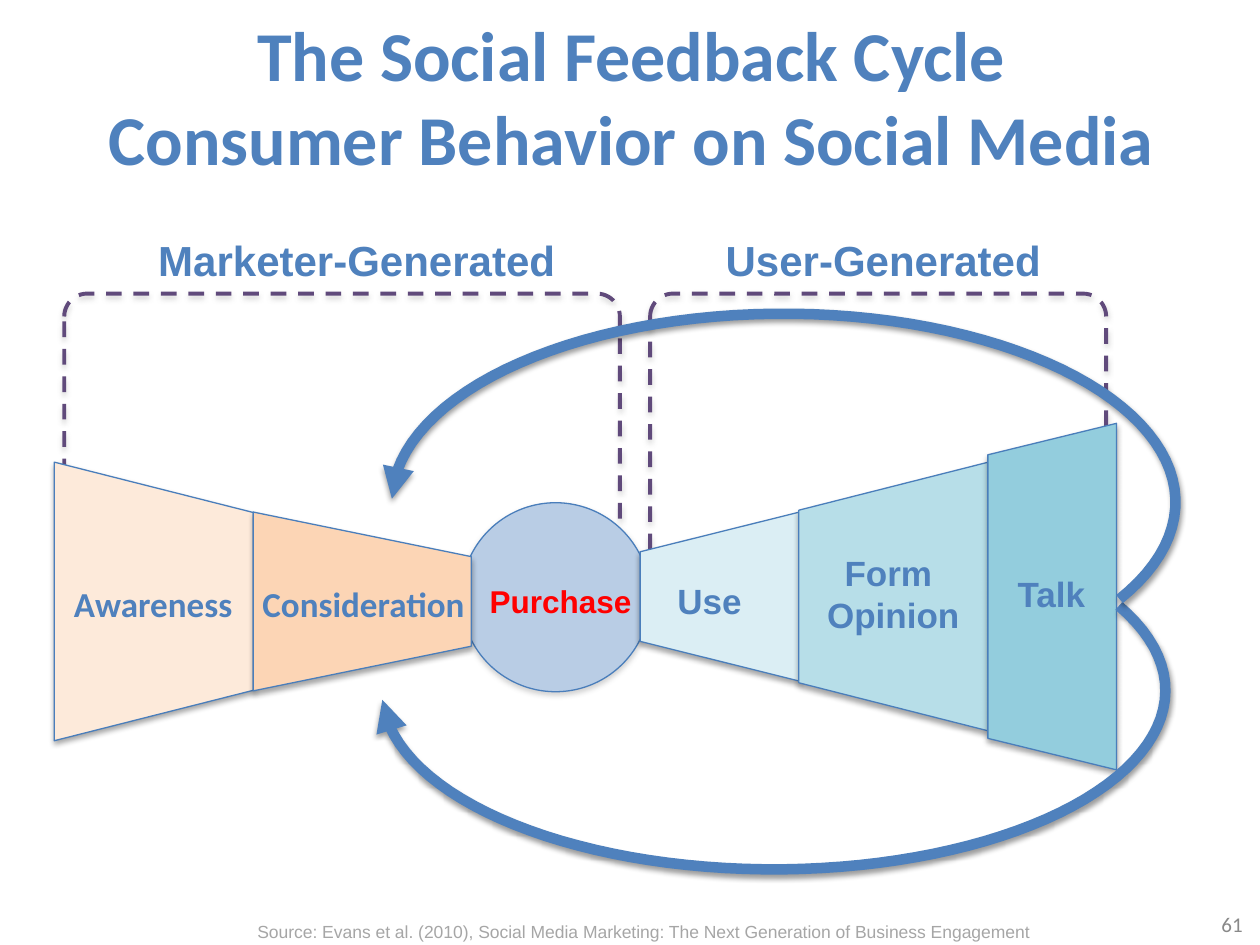
"""Build the social feedback cycle slide."""
import math

import pptx
import pptx.dml.color
import pptx.enum.dml
import pptx.enum.shapes
import pptx.enum.text
import pptx.oxml
import pptx.util

Pt = pptx.util.Pt
RGB = pptx.dml.color.RGBColor.from_string
KIND = pptx.enum.shapes.MSO_SHAPE
ALIGN = pptx.enum.text.PP_ALIGN
ANCHOR = pptx.enum.text.MSO_ANCHOR
DASH = pptx.enum.dml.MSO_LINE.DASH
NS = 'xmlns:a="http://schemas.openxmlformats.org/drawingml/2006/main"'

THEME = {
    "blue": "4F81BD", "edge": "4A7EBB", "frame": "604A7B", "ball": "B9CDE5",
    "red": "FF0000", "gray": "898989", "pale": "A6A6A6",
    "soft": "808080", "dark": "000000",
    "title": 40, "head": 24, "step": 20, "buy": 18, "page": 12, "note": 10,
}

FRAMES = [(371.5, 167.8, 260.6, 169.9), (36.7, 167.8, 317.5, 169.9)]
BALL = (263.5, 287.3, 108, 108)
STEPS = [
    (31, 144.7, 343.7, 79.6, 50.8, "FDEADA"),
    (144.7, 269.3, 343.7, 51.1, 25.6, "FCD5B5"),
    (365.8, 456.5, 340.9, 25.6, 48.2, "DBEEF4"),
    (456.5, 564.5, 340.9, 49.3, 76.7, "B7DEE8"),
    (564.5, 638, 340.9, 81, 99, "93CDDD"),
]
LOOPS = [
    (218.2, 292.3, 447.8, 204.5, -28.2, 177),
    (223.9, 179.3, 447.8, 215.3, 31, -179),
]
LABELS = [
    ("Awareness", (31, 332.6, 113, 24.5), "step", "Calibri", "blue"),
    ("Consideration", (144.7, 332.6, 126, 24.5), "step", "Calibri", "blue"),
    ("Purchase", (275, 332.6, 90.7, 22.3), "buy", "Arial", "red"),
    ("Use", (365.8, 331.2, 79.2, 24.5), "step", "Arial", "blue"),
    ("Form \vOpinion", (456.5, 315.4, 108, 48.2), "step", "Arial", "blue"),
    ("Talk", (569.5, 326.9, 62.6, 24.5), "step", "Arial", "blue"),
    ("User-Generated", (411.1, 133.9, 187.2, 28.8), "head", "Arial", "blue"),
    ("Marketer-Generated", (70.6, 133.9, 266.4, 28.8), "head", "Arial", "blue"),
]
TITLE = "The Social Feedback Cycle\vConsumer Behavior on Social Media"
SOURCE = ("Source: Evans et al. (2010), Social Media Marketing: "
          "The Next Generation of Business Engagement")


def put(obj, vals):
    """Set each named value on an object."""
    for name, val in vals.items():
        setattr(obj, name, val)


def style(shape, fill, line, width, shade, alpha=35, dash=None):
    """Apply fill, line and a soft drop shadow."""
    if fill:
        shape.fill.solid()
        shape.fill.fore_color.rgb = RGB(fill)
    else:
        shape.fill.background()
    shape.line.color.rgb = RGB(THEME[line])
    put(shape.line, {"width": Pt(width), "dash_style": dash})
    shape.shadow.inherit = False
    glow = pptx.oxml.parse_xml(
        f'<a:outerShdw {NS} blurRad="{Pt(3.15)}" dist="{Pt(1.8)}" dir="5400000" '
        f'rotWithShape="0"><a:srgbClr val="{THEME[shade]}">'
        f'<a:alpha val="{alpha * 1000}"/></a:srgbClr></a:outerShdw>')
    shape._element.spPr.find(pptx.oxml.ns.qn("a:effectLst")).append(glow)


def preset(shapes, kind, box):
    """Add a preset shape at a box in points."""
    return shapes.add_shape(kind, *map(Pt, box))


def trace(shapes, dots, close):
    """Add a freeform through points."""
    dots = [(Pt(x), Pt(y)) for x, y in dots]
    pen = shapes.build_freeform(*dots[0])
    pen.add_line_segments(dots[1:], close=close)
    return pen.convert_to_shape()


def write(shapes, text, box, size, face, color, bold=True, pad=None,
          align=ALIGN.CENTER, anchor=ANCHOR.TOP):
    """Add a one-paragraph text box."""
    frame = shapes.add_textbox(*map(Pt, box)).text_frame
    put(frame, {"word_wrap": True, "vertical_anchor": anchor})
    if pad is not None:
        put(frame, {f"margin_{side}": Pt(pad)
                    for side in ("left", "top", "right", "bottom")})
    para = frame.paragraphs[0]
    put(para, {"text": text, "alignment": align})
    for run in para.runs:
        put(run.font, {"size": Pt(THEME[size]), "name": face, "bold": bold})
        run.font.color.rgb = RGB(THEME[color])


def curve(shapes, left, top, width, height, start, end, count=72):
    """Add an elliptic arrow between two angles."""
    turns = [math.radians(start + (end - start) * i / count)
             for i in range(count + 1)]
    dots = [(left + width / 2 * (1 + math.cos(t)),
             top + height / 2 * (1 + math.sin(t))) for t in turns]
    shape = trace(shapes, dots, False)
    style(shape, None, "blue", 6, "dark", 38)
    shape.line._ln.append(pptx.oxml.parse_xml(f'<a:tailEnd {NS} type="triangle"/>'))


def main():
    """Draw the slide and save it."""
    deck = pptx.Presentation()
    put(deck, {"slide_width": Pt(720), "slide_height": Pt(540)})
    shapes = deck.slides.add_slide(deck.slide_layouts[6]).shapes

    for box in FRAMES:
        frame = preset(shapes, KIND.ROUNDED_RECTANGLE, box)
        frame.adjustments[0] = 0.077
        style(frame, None, "frame", 2.25, "soft", dash=DASH)
    style(preset(shapes, KIND.OVAL, BALL), THEME["ball"], "edge", 0.75, "soft")

    write(shapes, TITLE, (36.7, 9.4, 648, 90), "title", "Calibri", "blue",
          anchor=ANCHOR.MIDDLE)
    write(shapes, "61", (549.4, 513.4, 167.8, 28.8), "page", "Calibri", "gray",
          bold=False, align=ALIGN.RIGHT, anchor=ANCHOR.MIDDLE)

    for left, right, mid, near, far, fill in STEPS:
        dots = [(left, mid - near), (right, mid - far),
                (right, mid + far), (left, mid + near)]
        style(trace(shapes, dots, True), fill, "edge", 0.75, "dark")
    for label in LABELS:
        write(shapes, *label, pad=0)
    for loop in LOOPS:
        curve(shapes, *loop)
    write(shapes, SOURCE, (121.7, 522.7, 491.8, 19.4), "note", "Arial", "pale",
          bold=False)
    deck.save("out.pptx")


if __name__ == "__main__":
    main()
